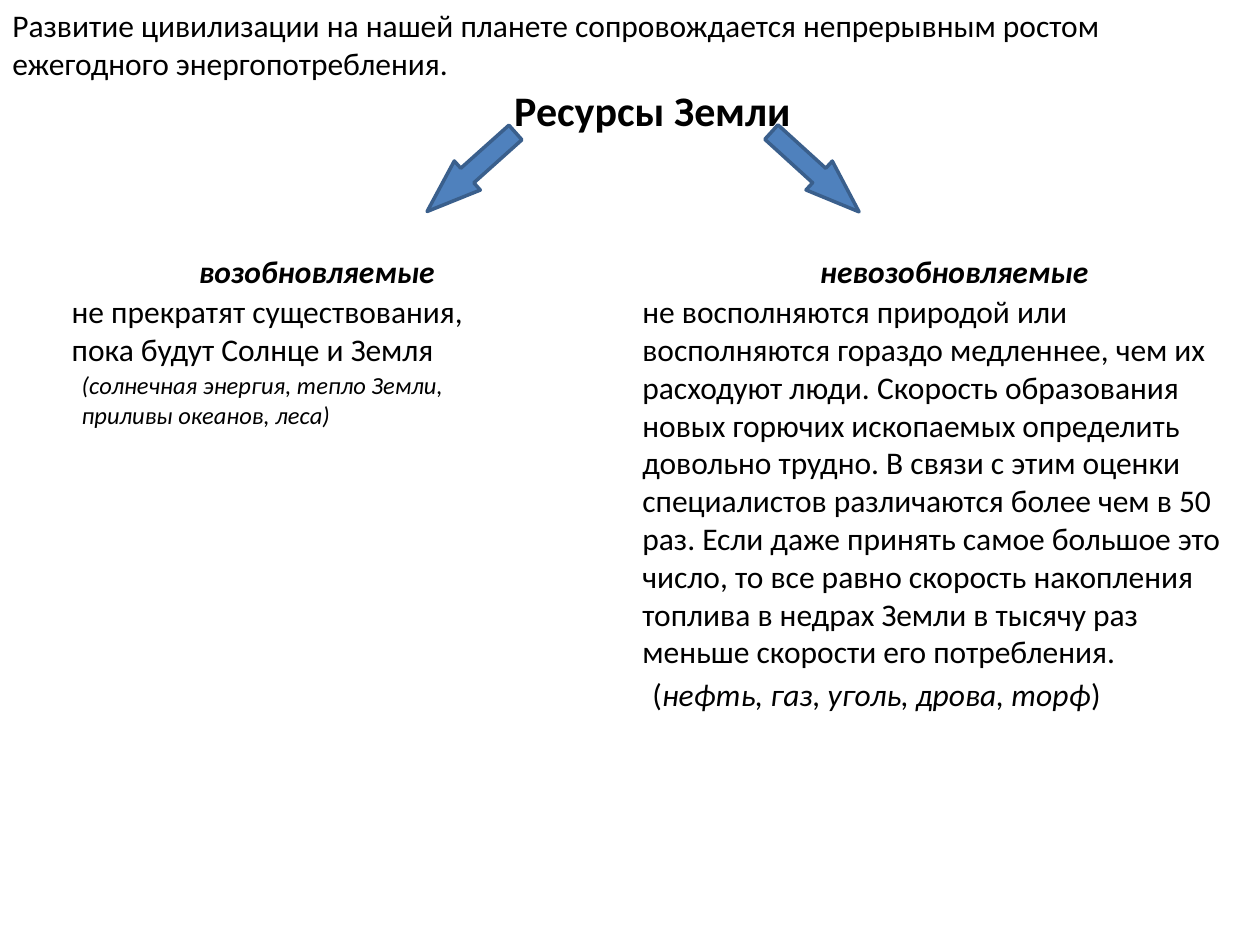
from pptx import Presentation
from pptx.dml.color import RGBColor
from pptx.enum.shapes import MSO_SHAPE
from pptx.enum.text import MSO_ANCHOR, MSO_AUTO_SIZE, PP_ALIGN
from pptx.util import Inches, Pt

RIGHT_ARROW = MSO_SHAPE.RIGHT_ARROW
TOP = MSO_ANCHOR.TOP
GROW = MSO_AUTO_SIZE.SHAPE_TO_FIT_TEXT
LEFT = PP_ALIGN.LEFT
TITLE_ONLY = 5


def color(value):
    return RGBColor.from_string(value)


class SlideBuilder:
    font_name = "Calibri"
    text_color = "000000"
    arrow_fill = "4F81BD"
    arrow_line = "3A5F8C"
    body_size = 18

    def __init__(self, slide):
        self.slide = slide

    def fill_text(self, shape, runs, size, bold, wrap):
        frame = shape.text_frame
        frame.word_wrap = wrap
        frame.auto_size = GROW
        frame.vertical_anchor = TOP
        paragraph = frame.paragraphs[0]
        paragraph.alignment = LEFT
        for text, italic in runs:
            run = paragraph.add_run()
            run.text = text
            run.font.name = self.font_name
            run.font.size = Pt(size)
            run.font.bold = bold
            run.font.italic = italic
            run.font.color.rgb = color(self.text_color)

    def title(self, left, top, width, height, text):
        shape = self.slide.shapes.title
        shape.left, shape.top = Inches(left), Inches(top)
        shape.width, shape.height = Inches(width), Inches(height)
        self.fill_text(shape, [(text, False)], 24, True, False)

    def text(self, left, top, width, height, runs, size=body_size, bold=False, wrap=True):
        shape = self.slide.shapes.add_textbox(
            Inches(left), Inches(top), Inches(width), Inches(height))
        self.fill_text(shape, runs, size, bold, wrap)

    def heading(self, left, width, text):
        self.text(left, 1.95, width, 0.4, [(text, True)], bold=True, wrap=False)

    def arrow(self, left, rotation):
        shape = self.slide.shapes.add_shape(
            RIGHT_ARROW, Inches(left), Inches(1.21), Inches(0.94), Inches(0.31))
        shape.shadow.inherit = False
        shape.rotation = rotation
        shape.adjustments[0] = 0.5
        shape.adjustments[1] = 1.38
        shape.fill.solid()
        shape.fill.fore_color.rgb = color(self.arrow_fill)
        shape.line.color.rgb = color(self.arrow_line)
        shape.line.width = Pt(2)


def main():
    presentation = Presentation()
    presentation.slide_width = Inches(10)
    presentation.slide_height = Inches(7.5)
    slide = presentation.slides.add_slide(presentation.slide_layouts[TITLE_ONLY])
    builder = SlideBuilder(slide)

    builder.text(0, 0, 9.84, 0.71, [(
        "Развитие цивилизации на нашей планете сопровождается непрерывным ростом "
        "ежегодного энергопотребления.", False)])
    builder.title(3.98, 0.62, 2.42, 0.5, "Ресурсы Земли")
    builder.arrow(6, 42.3)
    builder.arrow(3.27, 138.2)

    builder.heading(1.48, 2.1, "возобновляемые")
    builder.text(0.47, 2.27, 3.75, 0.71, [(
        "не прекратят существования, пока будут Солнце и Земля", False)])
    builder.text(0.55, 2.89, 3.2, 0.57, [(
        "(солнечная энергия, тепло Земли, приливы океанов, леса)", True)], size=14)

    builder.heading(6.41, 2.36, "невозобновляемые")
    builder.text(5, 2.27, 5, 3.13, [(
        "не восполняются природой или восполняются гораздо медленнее, чем их "
        "расходуют люди. Скорость образования новых горючих ископаемых определить "
        "довольно трудно. В связи с этим оценки специалистов различаются более чем "
        "в 50 раз. Если даже принять самое большое это число, то все равно скорость "
        "накопления топлива в недрах Земли в тысячу раз меньше скорости его "
        "потребления.", False)])
    builder.text(5.08, 5.31, 3.98, 0.4, [
        ("(", False), ("нефть, газ, уголь, дрова, торф", True), (")", False)], wrap=False)

    presentation.save("out.pptx")


if __name__ == "__main__":
    main()
